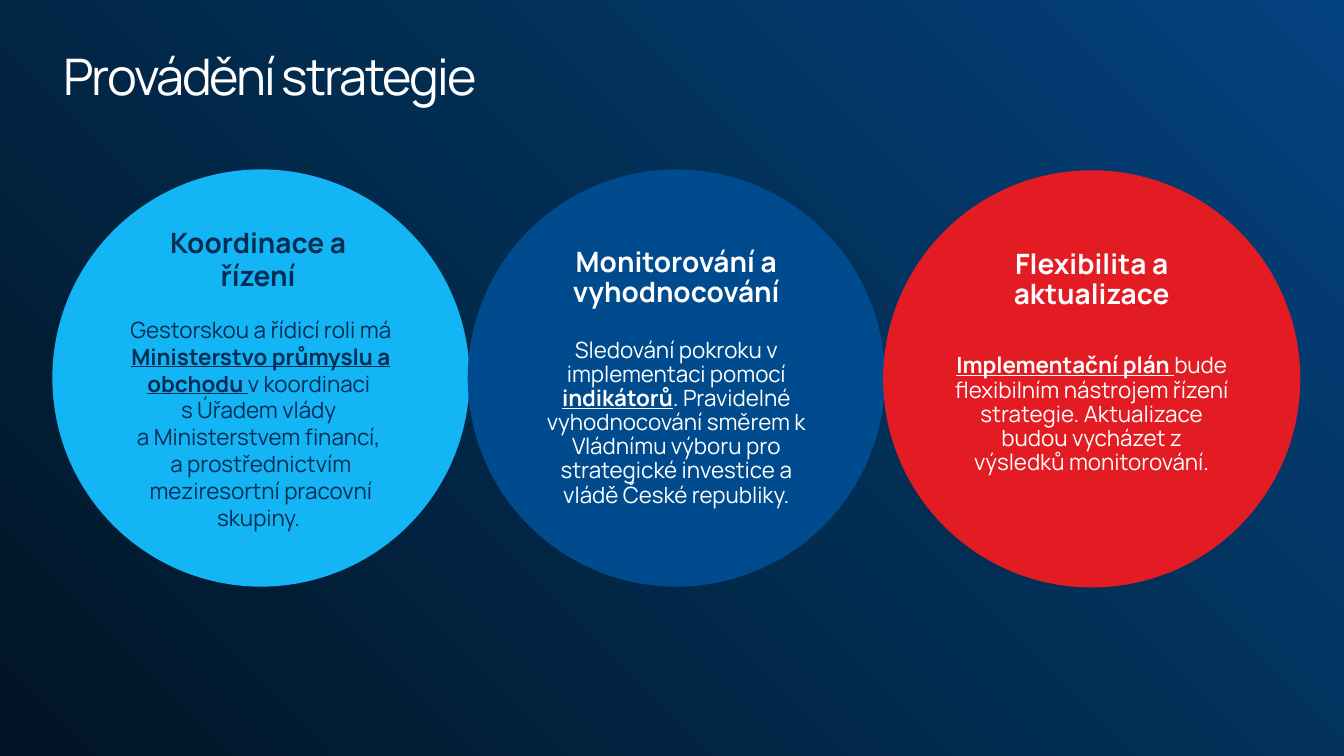
from copy import deepcopy

from pptx import Presentation
from pptx.dml.color import RGBColor
from pptx.enum.shapes import MSO_SHAPE as Shape
from pptx.enum.text import MSO_ANCHOR as Anchor, MSO_AUTO_SIZE as AutoSize, PP_ALIGN as Align
from pptx.oxml.ns import qn
from pptx.util import Pt

FONT = "Manrope"
NAVY, WHITE = "022D52", "FFFFFF"
BACKGROUND_STOPS = [(0, "011425"), (0.52, NAVY), (1, "044280")]

CIRCLE_SIZE = 298
CIRCLE_LEFT = 37.4
CIRCLE_PITCH = 296.7

# Each paragraph: space after, then runs of (text, format)
HEADING = dict(size=20, bold=True)
STRONG = dict(bold=True, underline=True)
CIRCLES = [
    dict(top=121, fill="13B5F4", color=NAVY, line_spacing=1.0, paragraphs=[
        (0, [("Koordinace a ", HEADING)]),
        (16.8, [("řízení ", HEADING)]),
        (0, [("Gestorskou a řídicí roli má ", {}),
             ("Ministerstvo průmyslu a obchodu ", STRONG),
             ("v koordinaci \ns Úřadem vlády \na Ministerstvem financí, \n"
              "a prostřednictvím meziresortní pracovní skupiny. ", {})]),
    ]),
    dict(top=121, fill="004B8D", color=WHITE, line_spacing=0.9, paragraphs=[
        (21.6, [("Monitorování a vyhodnocování", HEADING)]),
        (0, [("Sledování pokroku v implementaci pomocí ", {}),
             ("indikátorů", STRONG),
             (". Pravidelné vyhodnocování směrem k Vládnímu výboru pro "
              "strategické investice a vládě České republiky.", {})]),
    ]),
    dict(top=121.6, fill="E31B23", color=WHITE, line_spacing=0.9, bottom_inset=26.6, paragraphs=[
        (31.4, [("Flexibilita a aktualizace", HEADING)]),
        (0, [("Implementační plán ", STRONG),
             ("bude flexibilním nástrojem řízení strategie. Aktualizace "
              "budou vycházet z výsledků monitorování.", {})]),
    ]),
]


def rgb(color):
    return RGBColor.from_string(color)


def add_text(paragraph, text, color=WHITE, size=16, bold=False, underline=False, tracking=None):
    """Append formatted text; a newline becomes a line break."""
    for index, line in enumerate(text.split("\n")):
        if index:
            paragraph.add_line_break()
        run = paragraph.add_run()
        run.text = line
        font = run.font
        font.name, font.size = FONT, Pt(size)
        font.bold, font.underline = bold, underline
        font.color.rgb = rgb(color)
        if tracking is not None:
            run._r.get_or_add_rPr().set("spc", str(round(tracking * 100)))


def set_background(slide):
    fill = slide.background.fill
    fill.gradient()
    fill.gradient_angle = 45
    stop_list = next(slide.element.iter(qn("a:gsLst")))
    stop_list.append(deepcopy(stop_list[0]))
    for stop, (position, color) in zip(fill.gradient_stops, BACKGROUND_STOPS):
        stop.position = position
        stop.color.rgb = rgb(color)


def set_title(slide, text):
    title = slide.shapes.title
    title.left, title.top, title.width, title.height = Pt(38.2), Pt(37.4), Pt(884), Pt(39)
    frame = title.text_frame
    frame.auto_size = AutoSize.NONE
    frame.word_wrap = True
    frame.vertical_anchor = Anchor.MIDDLE
    paragraph = frame.paragraphs[0]
    paragraph.alignment = Align.LEFT
    paragraph.line_spacing = 0.9
    add_text(paragraph, text, size=36, tracking=-1.5)


def add_circle(slide, left, top, fill, color, line_spacing, paragraphs, bottom_inset=3.6):
    shape = slide.shapes.add_shape(Shape.OVAL, Pt(left), Pt(top), Pt(CIRCLE_SIZE), Pt(CIRCLE_SIZE))
    shape.shadow.inherit = False
    shape.fill.solid()
    shape.fill.fore_color.rgb = rgb(fill)
    shape.line.fill.background()
    frame = shape.text_frame
    frame.word_wrap = True
    frame.vertical_anchor = Anchor.MIDDLE
    frame.margin_bottom = Pt(bottom_inset)
    for index, (space_after, runs) in enumerate(paragraphs):
        paragraph = frame.add_paragraph() if index else frame.paragraphs[0]
        paragraph.alignment = Align.CENTER
        paragraph.line_spacing = line_spacing
        paragraph.space_after = Pt(space_after)
        for text, text_format in runs:
            add_text(paragraph, text, color=color, **text_format)


def main():
    presentation = Presentation()
    presentation.slide_width, presentation.slide_height = Pt(960), Pt(540)
    slide = presentation.slides.add_slide(presentation.slide_layouts[5])

    # Background and title
    set_background(slide)
    set_title(slide, "Provádění strategie")

    # Three circles in a row
    for index, circle in enumerate(CIRCLES):
        add_circle(slide, CIRCLE_LEFT + index * CIRCLE_PITCH, **circle)

    presentation.save("out.pptx")


if __name__ == "__main__":
    main()
